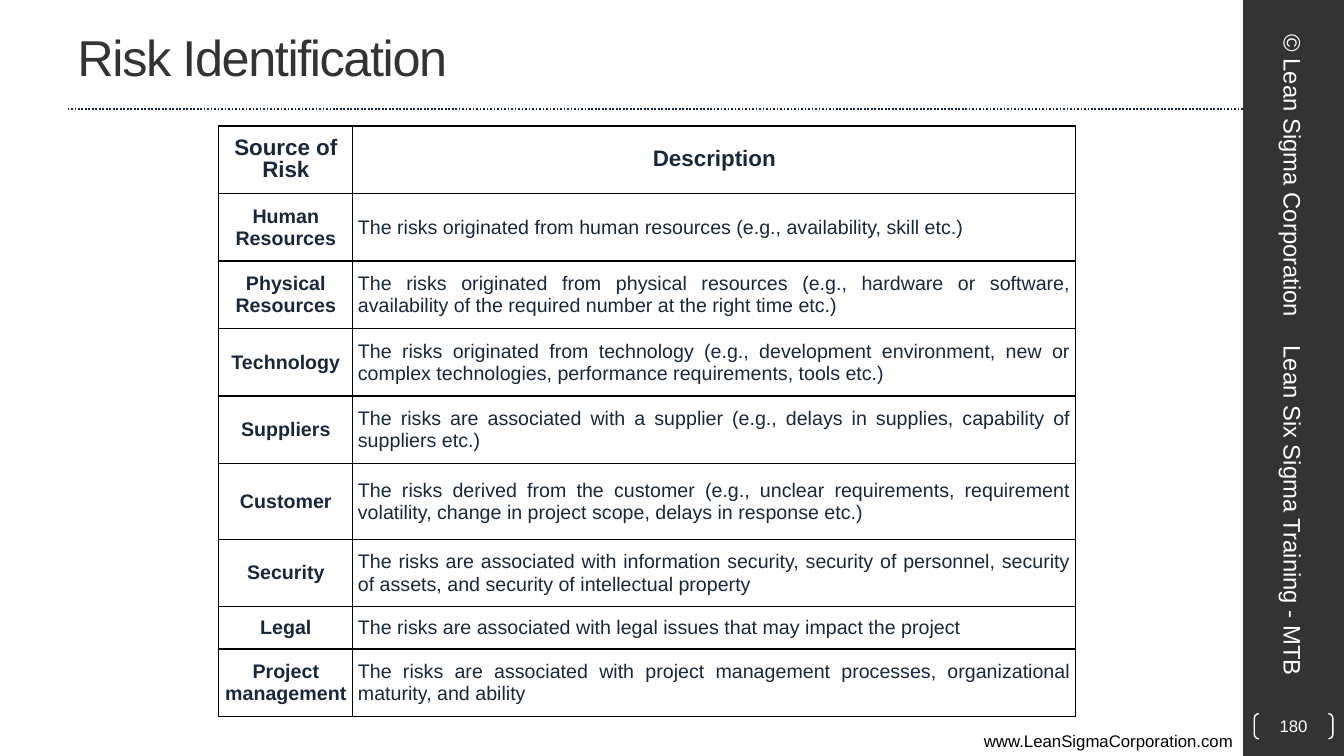
from lxml.etree import SubElement
from pptx import Presentation
from pptx.dml.color import RGBColor
from pptx.enum.dml import MSO_LINE
from pptx.enum.shapes import MSO_CONNECTOR, MSO_SHAPE
from pptx.enum.text import MSO_ANCHOR as ANCHOR, PP_ALIGN as ALIGN
from pptx.oxml.ns import qn
from pptx.util import Inches, Pt

WHITE = RGBColor(0xFF, 0xFF, 0xFF)
BLACK = RGBColor(0, 0, 0)
CHARCOAL = RGBColor(0x33, 0x33, 0x33)
NAVY = RGBColor(0x17, 0x27, 0x3B)
INK = RGBColor(0x18, 0x28, 0x3B)

RISKS = [
    ("Source of Risk", "Description", 0.67),
    ("Human Resources", "The risks originated from human resources "
     "(e.g., availability, skill etc.)", 0.67),
    ("Physical Resources", "The risks originated from physical resources (e.g., hardware or "
     "software, availability of the required number at the right time etc.)", 0.67),
    ("Technology", "The risks originated from technology (e.g., development environment, "
     "new or complex technologies, performance requirements, tools etc.)", 0.67),
    ("Suppliers", "The risks are associated with a supplier (e.g., delays in supplies, "
     "capability of suppliers etc.)", 0.67),
    ("Customer", "The risks derived from the customer (e.g., unclear requirements, requirement "
     "volatility, change in project scope, delays in response etc.)", 0.75),
    ("Security", "The risks are associated with information security, security of personnel, "
     "security of assets, and security of intellectual property", 0.67),
    ("Legal", "The risks are associated with legal issues that may impact the project", 0.42),
    ("Project management", "The risks are associated with project management processes, "
     "organizational maturity, and ability", 0.67),
]


class SlideBuilder:
    font_name = "Arial"

    def __init__(self, slide):
        self.slide = slide

    def put_text(self, frame, text, size, color, align=ALIGN.LEFT, bold=False, spacing=None):
        paragraph = frame.paragraphs[0]
        paragraph.alignment = align
        run = paragraph.add_run()
        run.text = text
        style = {"name": self.font_name, "size": Pt(size), "bold": bold}
        for key, value in style.items():
            setattr(run.font, key, value)
        run.font.color.rgb = color
        if spacing is not None:
            run._r.get_or_add_rPr().set("spc", str(spacing))
        return paragraph

    def text(self, box, text, size, color, align=ALIGN.LEFT, anchor=ANCHOR.MIDDLE,
             rotation=0, spacing=None):
        label = self.slide.shapes.add_textbox(*map(Inches, box))
        label.rotation = rotation
        label.text_frame.word_wrap = True
        label.text_frame.vertical_anchor = anchor
        self.put_text(label.text_frame, text, size, color, align, spacing=spacing)

    def shape(self, kind, box, fill=None, line=None):
        item = self.slide.shapes.add_shape(kind, *map(Inches, box))
        item.shadow.inherit = False
        if fill is None:
            item.fill.background()
        else:
            item.fill.solid()
            item.fill.fore_color.rgb = fill
        if line is None:
            item.line.fill.background()
        else:
            item.line.color.rgb = line
            item.line.width = Pt(1)
        return item

    def dotted_rule(self, left, right, top, color):
        rule = self.slide.shapes.add_connector(
            MSO_CONNECTOR.STRAIGHT, *map(Inches, (left, top, right, top)))
        rule.line.color.rgb = color
        rule.line.width = Pt(1.25)
        rule.line.dash_style = MSO_LINE.ROUND_DOT
        SubElement(rule._element.spPr, qn("a:effectLst"))

    def borders(self, cell, color):
        properties = cell._tc.get_or_add_tcPr()
        for side in ("a:lnL", "a:lnR", "a:lnT", "a:lnB"):
            edge = SubElement(properties, qn(side), w=str(Pt(1)))
            paint = SubElement(edge, qn("a:solidFill"))
            SubElement(paint, qn("a:srgbClr"), val=str(color))

    def cell(self, cell, text, size, align, bold):
        self.borders(cell, BLACK)
        cell.fill.background()
        layout = {"vertical_anchor": ANCHOR.MIDDLE, "margin_left": Inches(0.05),
                  "margin_right": Inches(0.05), "margin_top": 0, "margin_bottom": 0}
        for key, value in layout.items():
            setattr(cell, key, value)
        self.put_text(cell.text_frame, text, size, INK, align, bold).line_spacing = Pt(16)

    def risk_table(self, left, top, widths, risks):
        height = sum(risk[2] for risk in risks)
        table = self.slide.shapes.add_table(
            len(risks), len(widths),
            *map(Inches, (left, top, sum(widths), height))).table
        table.first_row = table.horz_banding = False
        for column, width in zip(table.columns, widths):
            column.width = Inches(width)
        for index, (source, description, row_height) in enumerate(risks):
            header = index == 0
            size = 16 if header else 14
            table.rows[index].height = Inches(row_height)
            self.cell(table.cell(index, 0), source, size, ALIGN.CENTER, True)
            self.cell(table.cell(index, 1), description, size,
                      ALIGN.CENTER if header else ALIGN.JUSTIFY, header)


def main():
    deck = Presentation()
    deck.slide_width, deck.slide_height = Inches(13.33), Inches(7.5)
    builder = SlideBuilder(deck.slides.add_slide(deck.slide_layouts[6]))

    # Sidebar, rule and footer
    builder.shape(MSO_SHAPE.RECTANGLE, (12.33, 0, 1, 7.5), fill=CHARCOAL)
    builder.dotted_rule(0.67, 12.33, 1.08, NAVY)
    builder.text((0, 7.2, 12.33, 0.3), "www.LeanSigmaCorporation.com", 12, BLACK,
                 ALIGN.RIGHT, ANCHOR.TOP)

    # Title
    builder.text((0.67, 0.03, 11.11, 1.05), "Risk Identification", 36, CHARCOAL, spacing=-100)

    # Page number in brackets
    page_number = builder.shape(MSO_SHAPE.DOUBLE_BRACKET, (12.44, 7.08, 0.78, 0.25), line=WHITE)
    page_number.adjustments[0] = 0.18
    frame = page_number.text_frame
    for side in ("left", "right", "top", "bottom"):
        setattr(frame, f"margin_{side}", 0)
    frame.vertical_anchor = ANCHOR.MIDDLE
    builder.put_text(frame, "180", 12, WHITE, ALIGN.CENTER)

    # Vertical sidebar labels
    builder.text((11.24, 1.48, 3.17, 0.53), "© Lean Sigma Corporation", 17, WHITE,
                 ALIGN.CENTER, rotation=90)
    builder.text((10.99, 4.9, 3.67, 0.53), "Lean Six Sigma Training - MTB", 17, WHITE,
                 rotation=90)

    # Risk sources
    builder.risk_table(2.17, 1.25, (1.33, 7.17), RISKS)

    deck.save("out.pptx")


if __name__ == "__main__":
    main()
